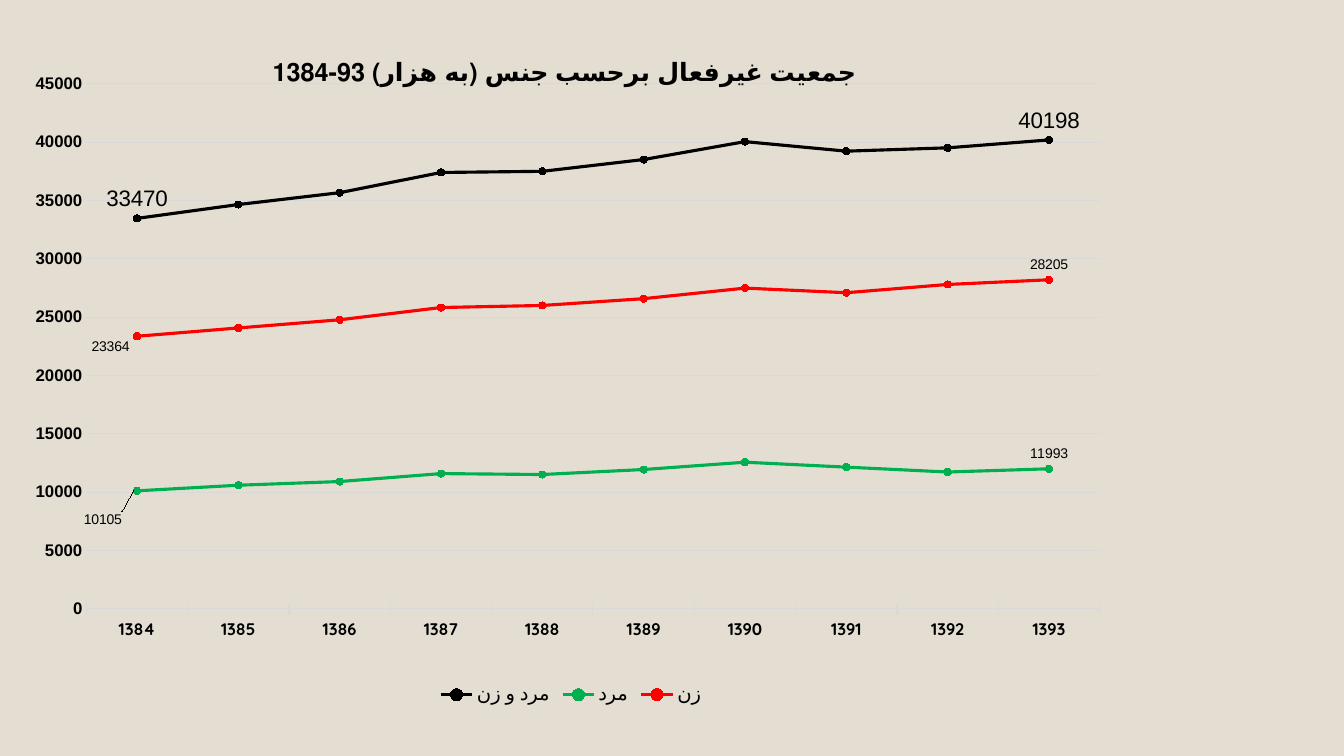
from lxml import etree
from pptx import Presentation
from pptx.chart.data import CategoryChartData
from pptx.dml.color import RGBColor
from pptx.enum.chart import (XL_CHART_TYPE, XL_LABEL_POSITION, XL_LEGEND_POSITION,
                             XL_MARKER_STYLE, XL_TICK_MARK)
from pptx.oxml.ns import qn
from pptx.util import Cm, Pt

LINE_MARKERS = XL_CHART_TYPE.LINE_MARKERS
ABOVE, LEFT = XL_LABEL_POSITION.ABOVE, XL_LABEL_POSITION.LEFT
LEGEND_BOTTOM = XL_LEGEND_POSITION.BOTTOM
CIRCLE = XL_MARKER_STYLE.CIRCLE
TICK_CROSS, TICK_NONE = XL_TICK_MARK.CROSS, XL_TICK_MARK.NONE

TITLE = "جمعيت غيرفعال برحسب جنس (به هزار) 93-1384"
YEARS = [str(year) for year in range(1384, 1394)]
# First-year label: position and shift as a share of the chart's width and height
POPULATION = [
    {"name": "مرد و زن", "color": "total", "label": "label_total",
     "first_label": (ABOVE, None),
     "thousands": (33470, 34658, 35676, 37408, 37505, 38516, 40049, 39235, 39521, 40198)},
    {"name": "مرد", "color": "men", "label": "label",
     "first_label": (LEFT, (-0.007, 0.043)),
     "thousands": (10105, 10585, 10900, 11581, 11503, 11931, 12558, 12138, 11719, 11993)},
    {"name": "زن", "color": "women", "label": "label",
     "first_label": (LEFT, (0, 0.016)),
     "thousands": (23364, 24073, 24776, 25827, 26002, 26586, 27491, 27097, 27802, 28205)},
]

THEME = {
    "colors": {"background": "E3DED1", "text": "000000", "grid": "D9D9D9",
               "total": "000000", "men": "00B050", "women": "FF0000"},
    "fonts": {
        "base": {"name": "Quicksand", "size": Pt(10)},
        "title": {"name": "Arial", "size": Pt(18), "bold": True},
        "years": {"name": "Quicksand", "size": Pt(12), "bold": True},
        "values": {"name": "Arial", "size": Pt(12), "bold": True},
        "legend": {"name": "Quicksand", "size": Pt(14)},
        "label": {"name": "Arial", "size": Pt(10)},
        "label_total": {"name": "Arial", "size": Pt(16)},
    },
    "series_line": Pt(2.25), "grid_line": Pt(0.75), "marker": 5,
}
CHART_BOX = (Cm(0.51), Cm(0.84), Cm(27.76), Cm(17.02))
PLOT_LAYOUT = {"layoutTarget": "inner", "xMode": "edge", "yMode": "edge",
               "x": 0.06, "y": 0.075, "w": 0.92, "h": 0.777}
TITLE_LAYOUT = {"xMode": "edge", "yMode": "edge", "x": 0.225, "y": 0.03}


def color(name):
    return RGBColor.from_string(THEME["colors"][name])


def apply(target, settings):
    for attribute, value in settings.items():
        setattr(target, attribute, value)


def style_font(font, role):
    apply(font, THEME["fonts"][role])
    font.color.rgb = color("text")


def style_line(line, color_name, width):
    line.color.rgb = color(color_name)
    line.width = width


def set_layout(element, index, settings):
    """Give a chart element a manual layout as its child at index."""
    for old in element.findall(qn("c:layout")):
        element.remove(old)
    layout = etree.Element(qn("c:layout"))
    manual = etree.SubElement(layout, qn("c:manualLayout"))
    for tag, value in settings.items():
        etree.SubElement(manual, qn(f"c:{tag}")).set("val", str(value))
    element.insert(index, layout)


def style_title(chart):
    frame = chart.chart_title.text_frame
    frame.text = TITLE
    paragraph = frame.paragraphs[0]
    style_font(paragraph.runs[0].font, "title")
    paragraph._p.get_or_add_pPr().set("rtl", "1")
    title = chart.chart_title._element
    set_layout(title, 1, TITLE_LAYOUT)
    title.find(qn("c:overlay")).set("val", "1")


def style_axes(chart):
    years, values = chart.category_axis, chart.value_axis
    apply(years, {"major_tick_mark": TICK_CROSS, "minor_tick_mark": TICK_NONE,
                  "has_major_gridlines": False})
    apply(values, {"major_tick_mark": TICK_NONE, "minor_tick_mark": TICK_NONE,
                   "minimum_scale": 0, "maximum_scale": 45000, "major_unit": 5000,
                   "has_major_gridlines": True})
    apply(values.tick_labels, {"number_format": "0", "number_format_is_linked": False})
    style_font(years.tick_labels.font, "years")
    style_font(values.tick_labels.font, "values")
    style_line(years.format.line, "grid", THEME["grid_line"])
    style_line(values.major_gridlines.format.line, "grid", THEME["grid_line"])
    values.format.line.fill.background()


def style_series(series, group):
    series.smooth = False
    style_line(series.format.line, group["color"], THEME["series_line"])
    apply(series.marker, {"style": CIRCLE, "size": THEME["marker"]})
    series.marker.format.fill.solid()
    series.marker.format.fill.fore_color.rgb = color(group["color"])
    series.marker.format.line.color.rgb = color(group["color"])

    series.data_labels.show_value = False
    ends = {0: group["first_label"], len(YEARS) - 1: (ABOVE, None)}
    for index, (position, shift) in ends.items():
        label = series.points[index].data_label
        style_font(label.font, group["label"])
        label.position = position
        if shift:
            label_xml = series._element.xpath(f'c:dLbls/c:dLbl[c:idx/@val="{index}"]')[0]
            set_layout(label_xml, 1, dict(zip("xy", shift)))


def main():
    presentation = Presentation()
    apply(presentation, {"slide_width": Cm(33.87), "slide_height": Cm(19.05)})
    slide = presentation.slides.add_slide(presentation.slide_layouts[6])
    slide.background.fill.solid()
    slide.background.fill.fore_color.rgb = color("background")

    data = CategoryChartData(number_format="0")
    data.categories = YEARS
    for group in POPULATION:
        data.add_series(group["name"], group["thousands"])
    chart = slide.shapes.add_chart(LINE_MARKERS, *CHART_BOX, data).chart

    style_font(chart.font, "base")
    style_title(chart)
    style_axes(chart)
    plot = chart.plots[0]
    plot.vary_by_categories = False
    for series, group in zip(plot.series, POPULATION):
        style_series(series, group)
    chart.has_legend = True
    apply(chart.legend, {"position": LEGEND_BOTTOM, "include_in_layout": False})
    style_font(chart.legend.font, "legend")
    set_layout(chart._chartSpace.chart.plotArea, 0, PLOT_LAYOUT)
    presentation.save("out.pptx")


if __name__ == "__main__":
    main()
